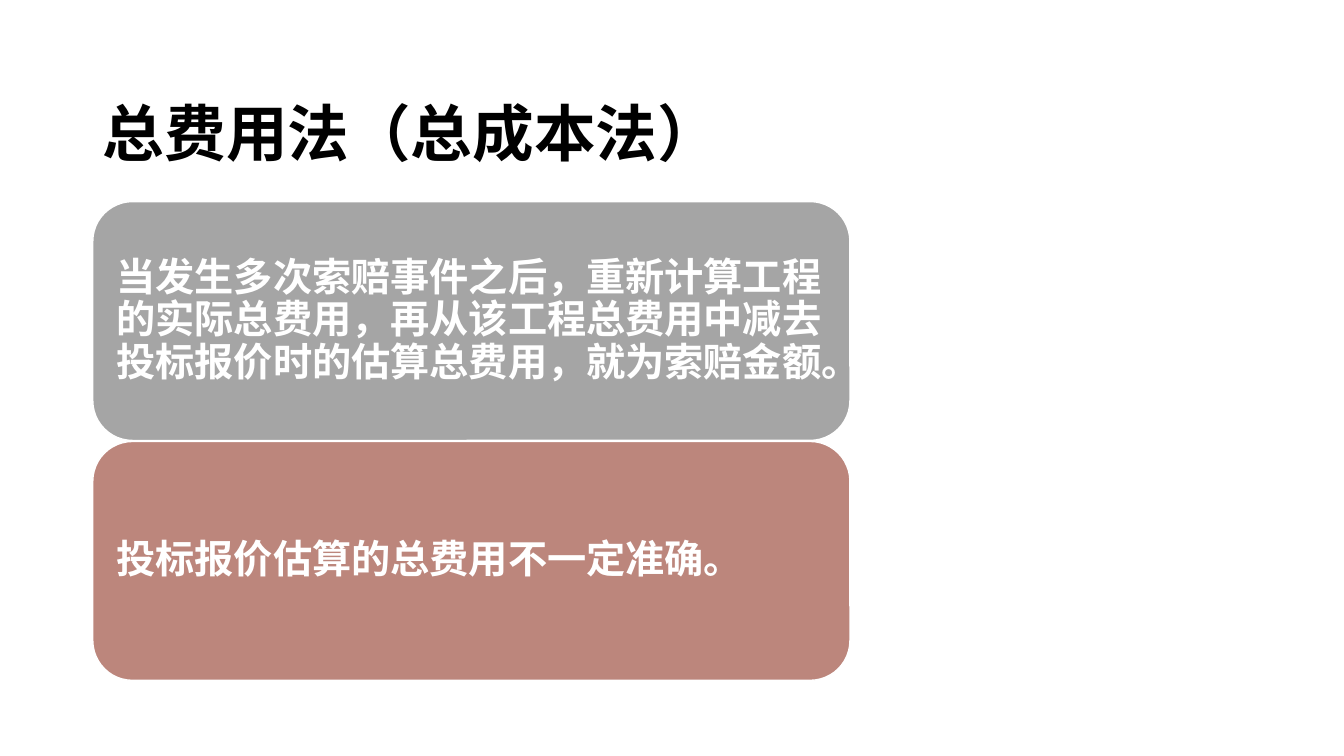
from dataclasses import dataclass

from pptx import Presentation
from pptx.dml.color import RGBColor
from pptx.enum.lang import MSO_LANGUAGE_ID
from pptx.enum.shapes import MSO_SHAPE
from pptx.enum.text import MSO_ANCHOR, MSO_AUTO_SIZE, PP_ALIGN
from pptx.util import Inches, Pt


@dataclass(frozen=True)
class Theme:
    font: str = "Times New Roman"
    ink: str = "000000"
    paper: str = "FFFFFF"
    grey: str = "A5A5A5"
    rose: str = "BC867C"
    title_size: int = 44
    body_size: int = 28


THEME = Theme()
TITLE = "总费用法（总成本法）"
CARDS = [
    ("当发生多次索赔事件之后，重新计算工程的实际总费用，"
     "再从该工程总费用中减去投标报价时的估算总费用，就为索赔金额。", THEME.grey),
    ("投标报价估算的总费用不一定准确。", THEME.rose),
]


def write(tf, text, size, color, spacing):
    """Fill a text frame with one bold, left-aligned paragraph."""
    tf.word_wrap = True
    tf.auto_size = MSO_AUTO_SIZE.NONE
    tf.vertical_anchor = MSO_ANCHOR.MIDDLE
    p = tf.paragraphs[0]
    p.alignment = PP_ALIGN.LEFT
    p.line_spacing = spacing
    r = p.add_run()
    r.text = text
    r.font.name = THEME.font
    r.font.size = Pt(size)
    r.font.bold = True
    r.font.color.rgb = RGBColor.from_string(color)
    r.font.language_id = MSO_LANGUAGE_ID.SIMPLIFIED_CHINESE


def add_title(s, left, top, width, height):
    sp = s.shapes.title
    sp.left, sp.top = Inches(left), Inches(top)
    sp.width, sp.height = Inches(width), Inches(height)
    write(sp.text_frame, TITLE, THEME.title_size, THEME.ink, 1.5)


def add_cards(s, left, top, width, height, gap=0.01):
    """Stack equal rounded cards in the given box."""
    card_h = (height - gap * (len(CARDS) - 1)) / len(CARDS)
    for i, (text, fill) in enumerate(CARDS):
        sp = s.shapes.add_shape(
            MSO_SHAPE.ROUNDED_RECTANGLE, Inches(left),
            Inches(top + i * (card_h + gap)), Inches(width), Inches(card_h))
        sp.shadow.inherit = False
        sp.fill.solid()
        sp.fill.fore_color.rgb = RGBColor.from_string(fill)
        sp.line.color.rgb = RGBColor.from_string(THEME.paper)
        sp.line.width = Pt(1)
        tf = sp.text_frame
        tf.margin_left = tf.margin_right = Inches(0.12)
        tf.margin_top = tf.margin_bottom = Inches(0.12)
        write(tf, text, THEME.body_size, THEME.paper, 0.9)


def main():
    prs = Presentation()
    prs.slide_width, prs.slide_height = Inches(13.33), Inches(7.5)
    s = prs.slides.add_slide(prs.slide_layouts[5])  # Title Only

    # Heading
    add_title(s, 0.92, 0.4, 11.5, 1.45)
    # Method and its weakness
    add_cards(s, 0.92, 2, 7.51, 4.75)

    prs.save("out.pptx")


if __name__ == "__main__":
    main()
